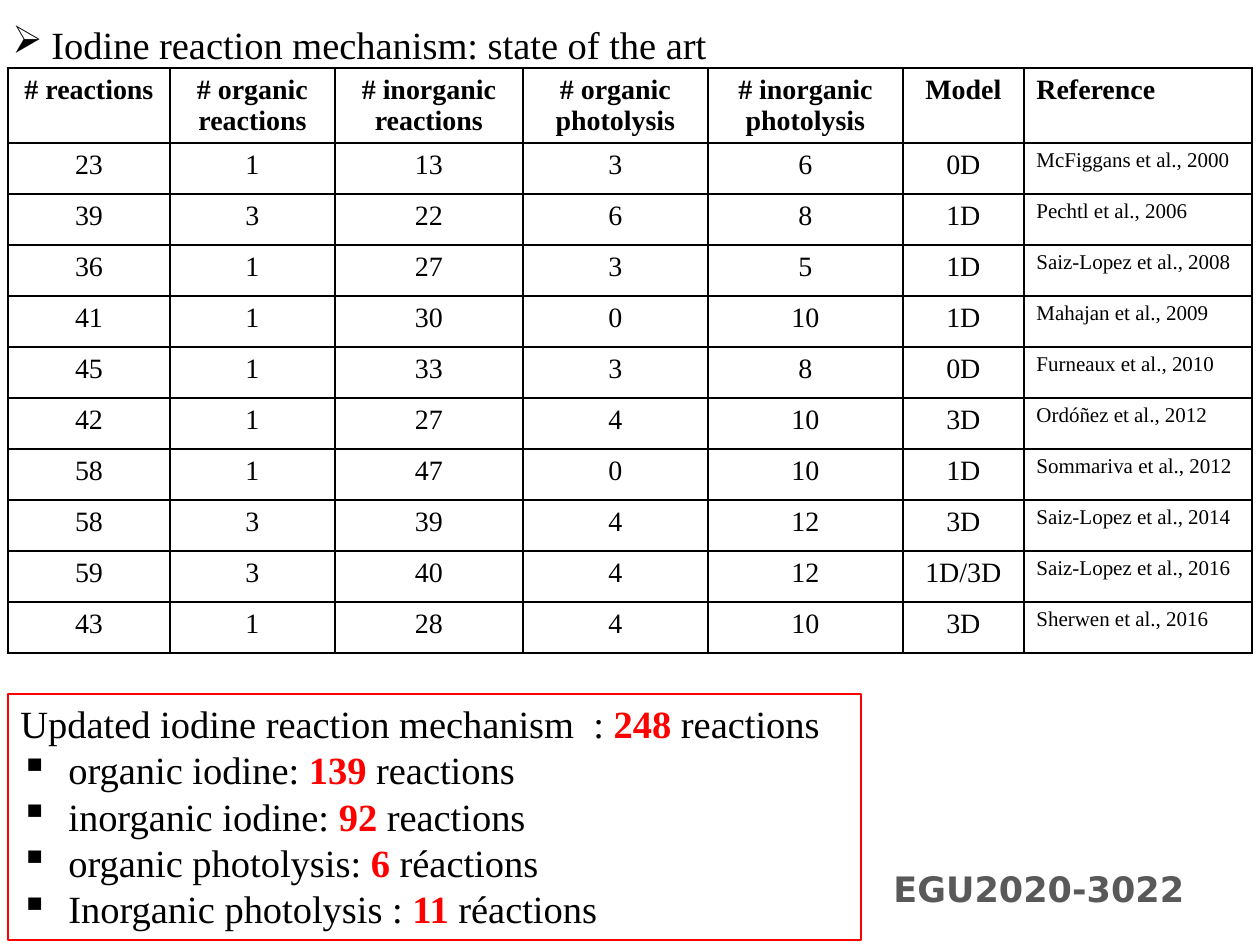
from lxml import etree
from pptx import Presentation
from pptx import util as u
from pptx.dml.color import RGBColor
from pptx.enum import shapes, text
from pptx.oxml.ns import qn

EMU_PER_PX = 914400 / 126
COLORS = {"ink": "000000", "paper": "FFFFFF", "accent": "FF0000", "label": "595959"}
SERIF = "Times New Roman"
SANS = "DejaVu Sans"
ALIGN = text.PP_ALIGN

COLUMNS = [162, 165, 188, 185, 195, 121, 228]
HEADER_HEIGHT, ROW_HEIGHT = 75, 51
HEADERS = ["# reactions", "# organic reactions", "# inorganic reactions",
           "# organic photolysis", "# inorganic photolysis", "Model", "Reference"]
MECHANISMS = [
    (23, 1, 13, 3, 6, "0D", "McFiggans et al., 2000"),
    (39, 3, 22, 6, 8, "1D", "Pechtl et al., 2006"),
    (36, 1, 27, 3, 5, "1D", "Saiz-Lopez et al., 2008"),
    (41, 1, 30, 0, 10, "1D", "Mahajan et al., 2009"),
    (45, 1, 33, 3, 8, "0D", "Furneaux et al., 2010"),
    (42, 1, 27, 4, 10, "3D", "Ordóñez et al., 2012"),
    (58, 1, 47, 0, 10, "1D", "Sommariva et al., 2012"),
    (58, 3, 39, 4, 12, "3D", "Saiz-Lopez et al., 2014"),
    (59, 3, 40, 4, 12, "1D/3D", "Saiz-Lopez et al., 2016"),
    (43, 1, 28, 4, 10, "3D", "Sherwen et al., 2016"),
]
SUMMARY = [
    ("Updated iodine reaction mechanism  : ", "248 ", "reactions"),
    ("organic iodine: ", "139 ", "reactions"),
    ("inorganic iodine: ", "92 ", "reactions"),
    ("organic photolysis: ", "6", " réactions"),
    ("Inorganic photolysis : ", "11", " réactions"),
]


def px(count):
    return u.Emu(round(count * EMU_PER_PX))


def color(name):
    return RGBColor.from_string(COLORS[name])


def add_span(para, words, size, ink="ink", bold=False, font=SERIF):
    span = para.add_run()
    span.text = words
    span.font.size = u.Pt(size)
    span.font.name = font
    span.font.bold = bold
    span.font.color.rgb = color(ink)


def add_bullet(para, mark, indent):
    properties = para._p.get_or_add_pPr()
    properties.set("marL", str(px(indent)))
    properties.set("indent", str(-px(indent)))
    etree.SubElement(properties, qn("a:buChar"), char=mark)


def fill_paper(fill, opacity=100):
    fill.solid()
    fill.fore_color.rgb = color("paper")
    if opacity < 100:
        tint = fill._xPr.find(qn("a:solidFill"))[0]
        etree.SubElement(tint, qn("a:alpha"), val=str(opacity * 1000))


def add_borders(cell):
    properties = cell._tc.get_or_add_tcPr()
    for place, side in enumerate(("a:lnL", "a:lnR", "a:lnT", "a:lnB")):
        line = etree.Element(qn(side), w=str(u.Pt(1)))
        fill = etree.SubElement(line, qn("a:solidFill"))
        etree.SubElement(fill, qn("a:srgbClr"), val=COLORS["ink"])
        properties.insert(place, line)


def add_mechanism_table(page):
    rows = [HEADERS] + MECHANISMS
    height = HEADER_HEIGHT + ROW_HEIGHT * len(MECHANISMS)
    table = page.shapes.add_table(len(rows), len(COLUMNS), px(8), px(68),
                                  px(sum(COLUMNS)), px(height)).table
    table.horz_banding = False
    for column, width in zip(table.columns, COLUMNS):
        column.width = px(width)
    for i, values in enumerate(rows):
        header = i == 0
        table.rows[i].height = px(HEADER_HEIGHT if header else ROW_HEIGHT)
        for j, value in enumerate(values):
            reference = j == len(COLUMNS) - 1
            cell = table.cell(i, j)
            fill_paper(cell.fill, 55)
            add_borders(cell)
            para = cell.text_frame.paragraphs[0]
            para.alignment = ALIGN.LEFT if reference else ALIGN.CENTER
            add_span(para, str(value), 12 if reference and not header else 16, bold=header)


def add_title(page):
    box = page.shapes.add_textbox(px(0), px(15), px(916), px(59))
    box.text_frame.word_wrap = True
    para = box.text_frame.paragraphs[0]
    add_bullet(para, "➢", 39)
    add_span(para, "Iodine reaction mechanism: state of the art", 22)


def add_panel(page, left, top, width, height, opacity=100):
    panel = page.shapes.add_shape(shapes.MSO_SHAPE.RECTANGLE,
                                  px(left), px(top), px(width), px(height))
    panel.shadow.inherit = False
    fill_paper(panel.fill, opacity)
    panel.line.fill.background()
    panel.text_frame.word_wrap = True
    panel.text_frame.vertical_anchor = text.MSO_ANCHOR.TOP
    return panel


def add_summary(page):
    panel = add_panel(page, 8, 694, 853, 246)
    panel.line.color.rgb = color("accent")
    panel.line.width = u.Pt(1.5)
    frame = panel.text_frame
    for i, (lead, count, tail) in enumerate(SUMMARY):
        para = frame.add_paragraph() if i else frame.paragraphs[0]
        para.alignment = ALIGN.LEFT
        if i:
            add_bullet(para, "▪", 48)
        add_span(para, lead, 22)
        add_span(para, count, 22, "accent", bold=True)
        add_span(para, tail, 22)


def add_session_label(page):
    panel = add_panel(page, 881, 861, 333, 53, opacity=55)
    para = panel.text_frame.paragraphs[0]
    para.alignment = ALIGN.JUSTIFY
    add_span(para, "EGU2020-3022", 20, "label", bold=True, font=SANS)


def main():
    deck = Presentation()
    deck.slide_width, deck.slide_height = px(1260), px(945)
    page = deck.slides.add_slide(deck.slide_layouts[6])
    add_mechanism_table(page)
    add_title(page)
    add_summary(page)
    add_session_label(page)
    deck.save("out.pptx")


if __name__ == "__main__":
    main()
